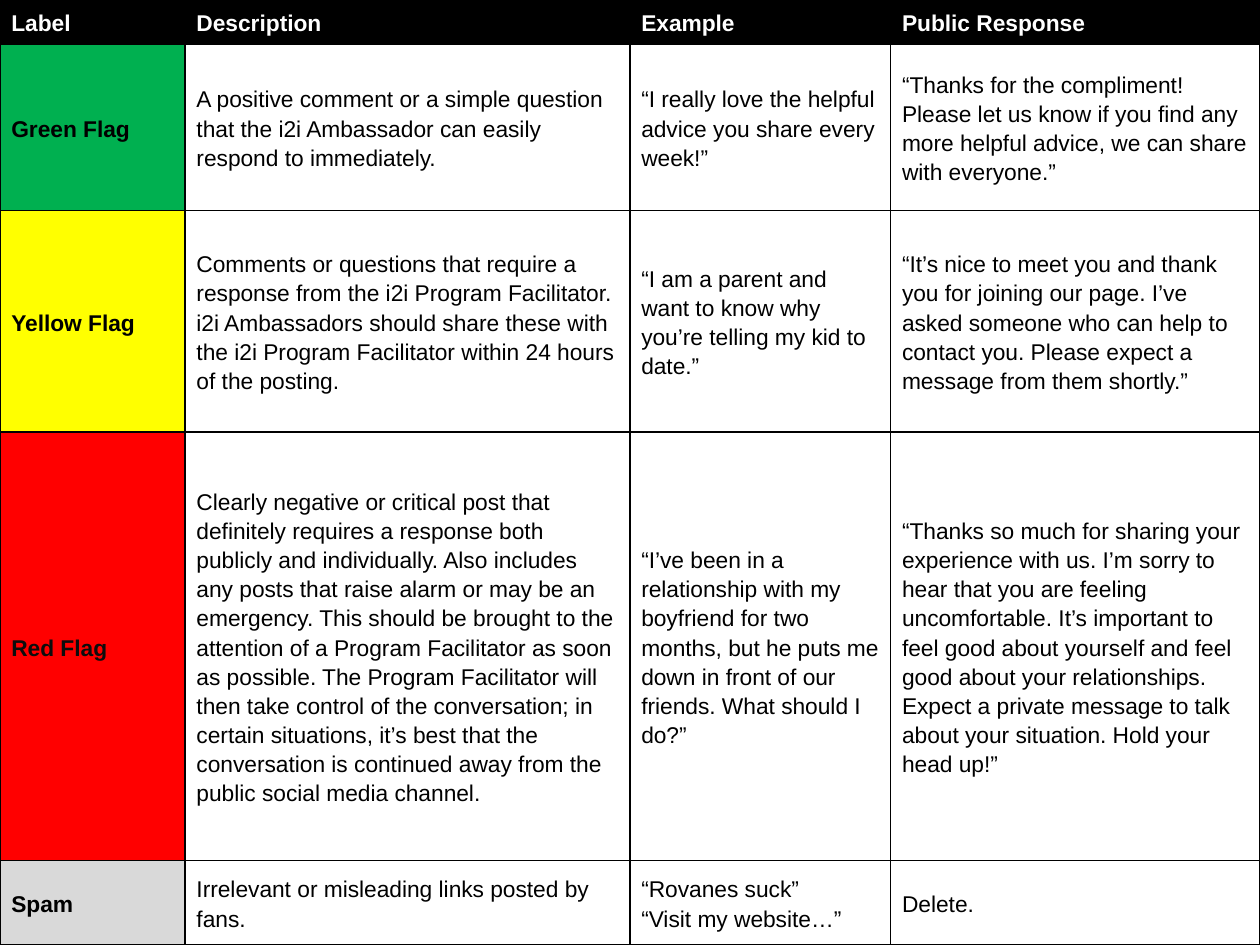
from lxml.etree import SubElement
from pptx import Presentation
from pptx.dml.color import RGBColor
from pptx.enum.text import MSO_ANCHOR
from pptx.oxml.ns import qn
from pptx.util import Inches, Pt

BLACK = RGBColor(0x00, 0x00, 0x00)
NEAR_BLACK = RGBColor(0x0D, 0x0D, 0x0D)
WHITE = RGBColor(0xFF, 0xFF, 0xFF)
GREEN = RGBColor(0x00, 0xB0, 0x50)
YELLOW = RGBColor(0xFF, 0xFF, 0x00)
RED = RGBColor(0xFF, 0x00, 0x00)
GRAY = RGBColor(0xD9, 0xD9, 0xD9)

COLUMN_WIDTHS = [1.47, 3.53, 2.07, 2.93]
ROW_HEIGHTS = [0.35, 1.32, 1.76, 3.4, 0.67]

HEADINGS = ["Label", "Description", "Example", "Public Response"]
# Each flag: label fill, label text colour, texts of the four columns
FLAGS = [
    (GREEN, BLACK, [
        "Green Flag",
        "A positive comment or a simple question that the i2i Ambassador can "
        "easily respond to immediately.",
        "“I really love the helpful advice you share every week!”",
        "“Thanks for the compliment! Please let us know if you find any more "
        "helpful advice, we can share with everyone.”",
    ]),
    (YELLOW, BLACK, [
        "Yellow Flag",
        "Comments or questions that require a response from the i2i Program "
        "Facilitator. i2i Ambassadors should share these with the i2i Program "
        "Facilitator within 24 hours of the posting.",
        "“I am a parent and want to know why you’re telling my kid to date.”",
        "“It’s nice to meet you and thank you for joining our page. I’ve asked "
        "someone who can help to contact you. Please expect a message from "
        "them shortly.”",
    ]),
    (RED, NEAR_BLACK, [
        "Red Flag",
        "Clearly negative or critical post that definitely requires a response "
        "both publicly and individually. Also includes any posts that raise "
        "alarm or may be an emergency. This should be brought to the attention "
        "of a Program Facilitator as soon as possible. The Program Facilitator "
        "will then take control of the conversation; in certain situations, "
        "it’s best that the conversation is continued away from the public "
        "social media channel.",
        "“I’ve been in a relationship with my boyfriend for two months, but he "
        "puts me down in front of our friends. What should I do?”",
        "“Thanks so much for sharing your experience with us. I’m sorry to hear "
        "that you are feeling uncomfortable. It’s important to feel good about "
        "yourself and feel good about your relationships. Expect a private "
        "message to talk about your situation. Hold your head up!”",
    ]),
    (GRAY, BLACK, [
        "Spam",
        "Irrelevant or misleading links posted by fans.",
        "“Rovanes suck”\n“Visit my website…”",
        "Delete.",
    ]),
]

CELL_FORMAT = {
    "vertical_anchor": MSO_ANCHOR.MIDDLE,
    "margin_left": Inches(0.09),
    "margin_right": Inches(0.09),
    "margin_top": Inches(0.05),
    "margin_bottom": Inches(0.05),
}
FONT_FORMAT = {"name": "Arial", "size": Pt(13)}


def apply_format(target, values):
    for name, value in values.items():
        setattr(target, name, value)


def add_borders(cell):
    properties = cell._tc.get_or_add_tcPr()
    for side in ("lnL", "lnR", "lnT", "lnB"):
        border = SubElement(properties, qn(f"a:{side}"), w=str(Pt(1)))
        line_fill = SubElement(border, qn("a:solidFill"))
        SubElement(line_fill, qn("a:srgbClr"), val=str(BLACK))


def fill_cell(cell, text, background, color, bold):
    add_borders(cell)  # borders must come before the fill in the cell's XML
    cell.fill.solid()
    cell.fill.fore_color.rgb = background
    apply_format(cell, CELL_FORMAT)
    cell.text = text
    for paragraph in cell.text_frame.paragraphs:
        paragraph.line_spacing = 1.15
        for run in paragraph.runs:
            apply_format(run.font, {**FONT_FORMAT, "bold": bold})
            run.font.color.rgb = color


def add_flag_table(slide, width, height):
    table = slide.shapes.add_table(
        len(ROW_HEIGHTS), len(COLUMN_WIDTHS), 0, 0, width, height
    ).table
    apply_format(table, {"first_row": False, "horz_banding": False})
    for column, share in zip(table.columns, COLUMN_WIDTHS):
        column.width = int(width * share / sum(COLUMN_WIDTHS))
    for row, share in zip(table.rows, ROW_HEIGHTS):
        row.height = int(height * share / sum(ROW_HEIGHTS))

    for column, heading in enumerate(HEADINGS):
        fill_cell(table.cell(0, column), heading, BLACK, WHITE, True)
    for row, (flag_fill, label_color, texts) in enumerate(FLAGS, start=1):
        fill_cell(table.cell(row, 0), texts[0], flag_fill, label_color, True)
        for column, text in enumerate(texts[1:], start=1):
            fill_cell(table.cell(row, column), text, WHITE, BLACK, False)


def main():
    presentation = Presentation()
    presentation.slide_width = Inches(10)
    presentation.slide_height = Inches(7.5)
    slide = presentation.slides.add_slide(presentation.slide_layouts[6])
    add_flag_table(slide, presentation.slide_width, presentation.slide_height)
    presentation.save("out.pptx")


if __name__ == "__main__":
    main()
